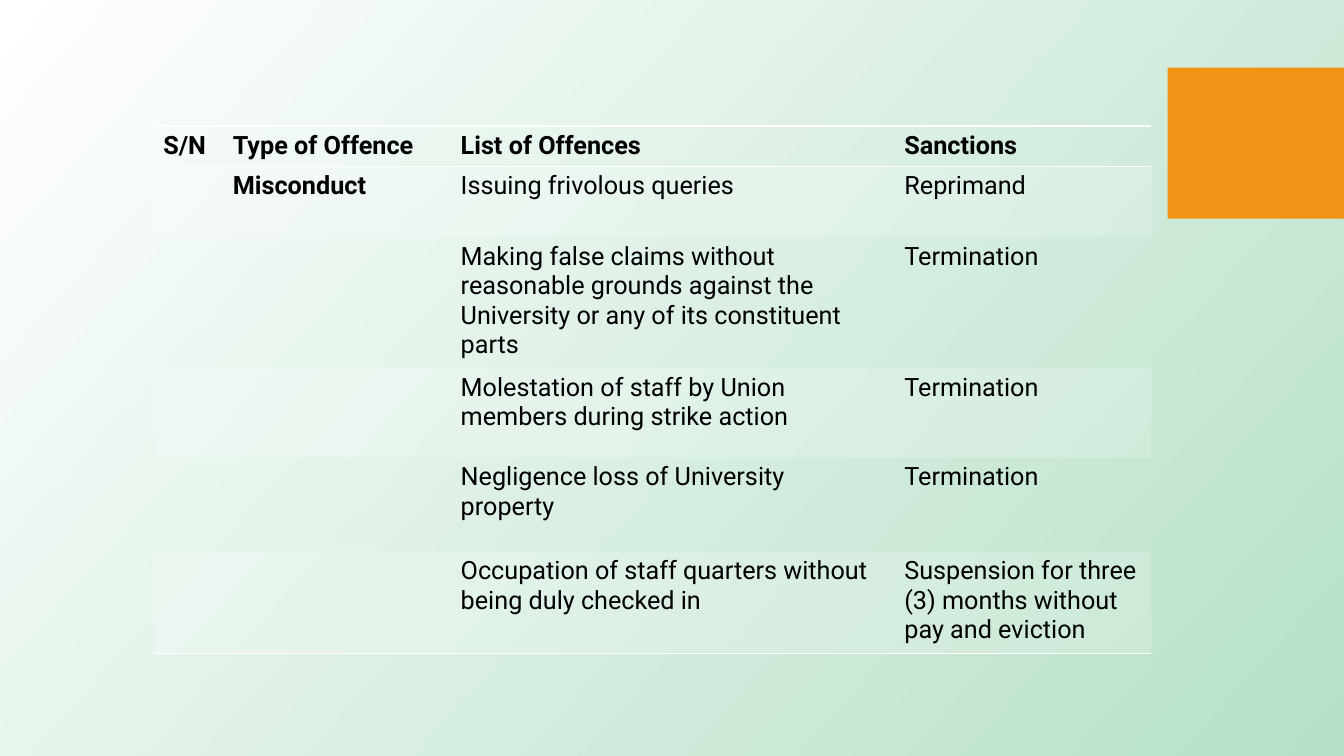
"""Build a slide with a table of misconduct offences and their sanctions."""
import pptx
import pptx.dml.color
import pptx.enum.shapes
import pptx.oxml
import pptx.oxml.ns
import pptx.util
from pptx.util import Inches

THEME = {
    "font": "Roboto",
    "size": 18,
    "rule_width": 1,
    "text": "000000",
    "white": "FFFFFF",
    "green": "B6E0C7",
    "orange": "F09415",
}
ROWS = [
    ("S/N", "Type of Offence", "List of Offences", "Sanctions"),
    ("", "Misconduct", "Issuing frivolous queries", "Reprimand"),
    ("", "", "Making false claims without reasonable grounds against the "
     "University or any of its constituent parts", "Termination"),
    ("", "", "Molestation of staff by Union members during strike action", "Termination"),
    ("", "", "Negligence loss of University property", "Termination"),
    ("", "", "Occupation of staff quarters without being duly checked in",
     "Suspension for three (3) months without pay and eviction"),
]
COLUMN_WIDTHS = [0.69, 2.26, 4.4, 2.55]
ROW_HEIGHTS = [0.4, 0.7, 1.3, 0.89, 0.93, 1.01]
NAMESPACE = pptx.oxml.ns.nsdecls("a")


def rgb(name):
    return pptx.dml.color.RGBColor.from_string(THEME[name])


def write_text(para, text, bold=False, size="size", color="text"):
    para.font.size = pptx.util.Pt(THEME[size])
    if text:
        span = para.add_run()
        span.text = text
        span.font.name = THEME["font"]
        span.font.size = pptx.util.Pt(THEME[size])
        span.font.bold = bold
        span.font.color.rgb = rgb(color)


deck = pptx.Presentation()
deck.slide_width, deck.slide_height = Inches(13.33), Inches(7.5)
page = deck.slides.add_slide(deck.slide_layouts[6])

backdrop = page.background.fill
backdrop.gradient()
backdrop.gradient_angle = 360 - 42
for stop, position, color in zip(backdrop.gradient_stops, (0, 1), ("white", "green")):
    stop.position = position
    stop.color.rgb = rgb(color)

accent = page.shapes.add_shape(
    pptx.enum.shapes.MSO_SHAPE.RECTANGLE,
    Inches(11.58), Inches(0.67), Inches(1.75), Inches(1.5))
accent.shadow.inherit = False
accent.fill.solid()
accent.fill.fore_color.rgb = rgb("orange")
accent.line.fill.background()

table = page.shapes.add_table(
    len(ROWS), len(COLUMN_WIDTHS), Inches(1.52), Inches(1.25),
    Inches(sum(COLUMN_WIDTHS)), Inches(sum(ROW_HEIGHTS))).table
table.first_row = False
table.horz_banding = False
for column, width in zip(table.columns, COLUMN_WIDTHS):
    column.width = Inches(width)
for row, height in zip(table.rows, ROW_HEIGHTS):
    row.height = Inches(height)

last_row = len(ROWS) - 1
rule_width = pptx.util.Pt(THEME["rule_width"])
for row_index, texts in enumerate(ROWS):
    ruled_sides = {"T": row_index in (0, 1), "B": row_index in (0, last_row)}
    for column_index, text in enumerate(texts):
        cell = table.cell(row_index, column_index)
        write_text(cell.text_frame.paragraphs[0], text,
                   bold=row_index == 0 or column_index == 1)
        properties = cell._tc.get_or_add_tcPr()
        for side in "LRTB":
            paint = "<a:noFill/>"
            if ruled_sides.get(side):
                paint = f'<a:solidFill><a:srgbClr val="{THEME["white"]}"/></a:solidFill>'
            properties.append(pptx.oxml.parse_xml(
                f'<a:ln{side} {NAMESPACE} w="{rule_width}">{paint}</a:ln{side}>'))
        if row_index % 2:
            cell.fill.solid()
            cell.fill.fore_color.rgb = rgb("white")
            shade = properties.find(pptx.oxml.ns.qn("a:solidFill"))[0]
            shade.append(pptx.oxml.parse_xml(f'<a:alpha {NAMESPACE} val="20000"/>'))
        else:
            cell.fill.background()

deck.save("out.pptx")
